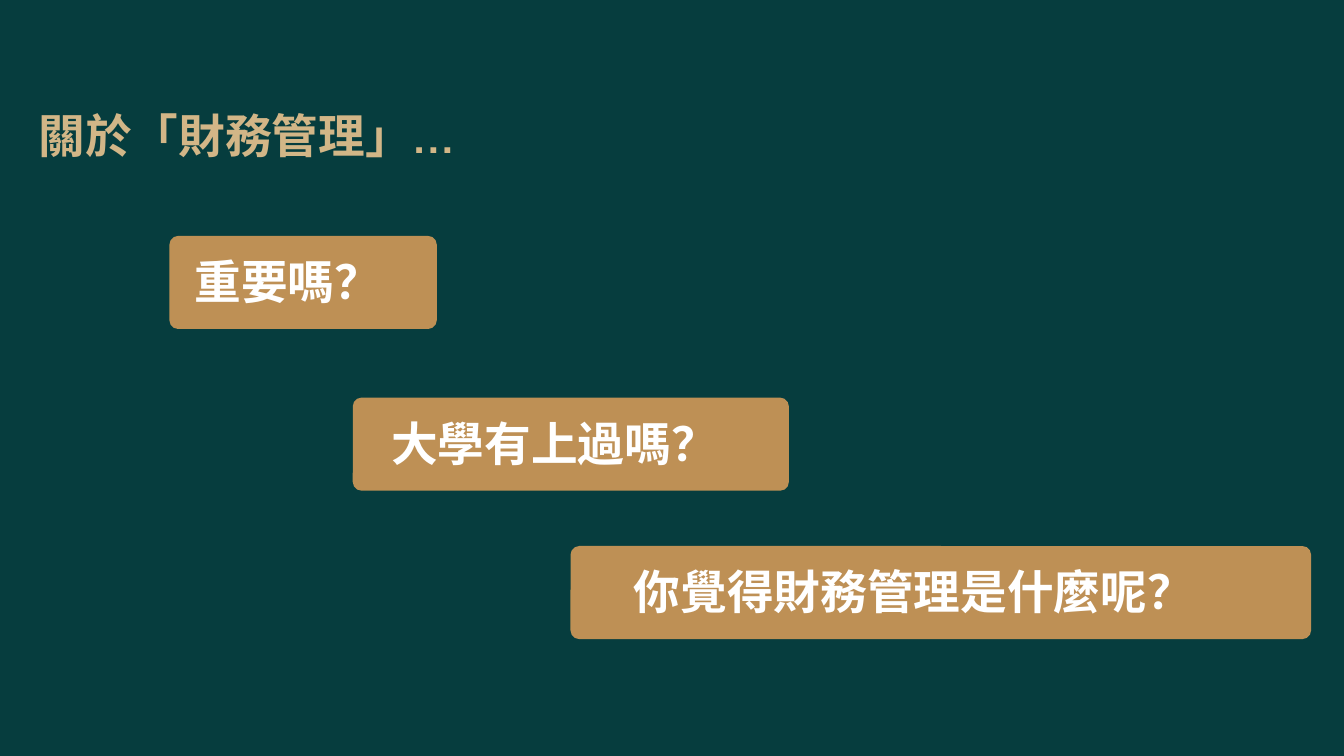
import pptx
import pptx.dml.color
import pptx.enum.shapes
import pptx.enum.text
import pptx.util

GREEN = pptx.dml.color.RGBColor(0x06, 0x3D, 0x3E)
SAND = pptx.dml.color.RGBColor(0xD2, 0xB6, 0x87)
BRONZE = pptx.dml.color.RGBColor(0xBE, 0x90, 0x55)
WHITE = pptx.dml.color.RGBColor(0xFF, 0xFF, 0xFF)

EMU_PER_PX = 9525
TITLE_ONLY = 5
CARD_HEIGHT = 133
CARD_RADIUS = 12.5
CARD_TEXT_TOP = 27

FONT = {"name": "Manrope", "size": pptx.util.Pt(50), "bold": True}
PARAGRAPH = {
    "alignment": pptx.enum.text.PP_ALIGN.LEFT,
    "line_spacing": pptx.util.Pt(55),
}
FRAME = {
    "margin_left": 0,
    "margin_top": 0,
    "margin_right": 0,
    "margin_bottom": 0,
    "word_wrap": True,
    "auto_size": pptx.enum.text.MSO_AUTO_SIZE.NONE,
    "vertical_anchor": pptx.enum.text.MSO_ANCHOR.TOP,
}

QUESTIONS = [
    ("重要嗎？", 242, 337, 382, 32),
    ("大學有上過嗎？", 504, 568, 623, 51),
    ("你覺得財務管理是什麼呢？", 815, 780, 1058, 87),
]


def px(length):
    return pptx.util.Emu(length * EMU_PER_PX)


def apply_format(target, values):
    for name, value in values.items():
        setattr(target, name, value)


def write_text(box, text, color, **margins):
    frame = box.text_frame
    apply_format(frame, {**FRAME, **margins})
    para = frame.paragraphs[0]
    apply_format(para, PARAGRAPH)
    span = para.add_run()
    span.text = text
    apply_format(span.font, FONT)
    span.font.color.rgb = color


def set_title(page, text, left, top, width, height):
    title = page.shapes.title
    place = {"left": left, "top": top, "width": width, "height": height}
    apply_format(title, {name: px(value) for name, value in place.items()})
    write_text(title, text, SAND)


def add_question(page, text, left, top, width, indent):
    card = page.shapes.add_shape(
        pptx.enum.shapes.MSO_SHAPE.ROUNDED_RECTANGLE,
        px(left), px(top), px(width), px(CARD_HEIGHT),
    )
    card.adjustments[0] = CARD_RADIUS / CARD_HEIGHT
    card.shadow.inherit = False
    card.fill.solid()
    card.fill.fore_color.rgb = BRONZE
    card.line.fill.background()
    write_text(
        card, text, WHITE,
        margin_left=px(indent), margin_top=px(CARD_TEXT_TOP),
    )


def main():
    deck = pptx.Presentation()
    apply_format(deck, {"slide_width": px(1920), "slide_height": px(1080)})
    page = deck.slides.add_slide(deck.slide_layouts[TITLE_ONLY])
    page.background.fill.solid()
    page.background.fill.fore_color.rgb = GREEN
    set_title(page, "關於「財務管理」...", 55, 160, 856, 80)
    for question in QUESTIONS:
        add_question(page, *question)
    deck.save("out.pptx")


if __name__ == "__main__":
    main()
